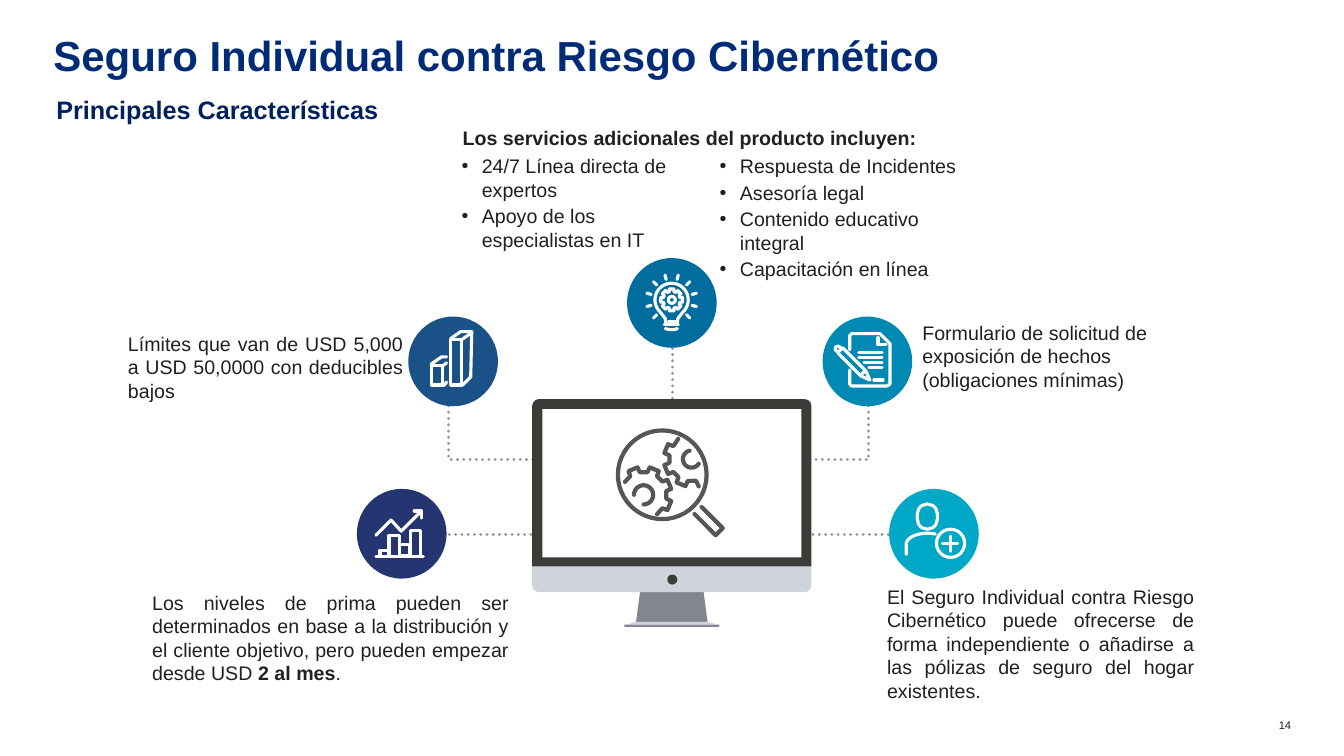
import math

import pptx
import pptx.dml.color
import pptx.enum.dml
import pptx.enum.shapes
import pptx.enum.text
import pptx.oxml.ns
import pptx.util
from lxml import etree

COLUMNS, ROWS = 133.33, 75
CELL = pptx.util.Inches(0.1)
SHAPE = pptx.enum.shapes.MSO_SHAPE
ALIGN = pptx.enum.text.PP_ALIGN
ANCHOR = pptx.enum.text.MSO_ANCHOR
DOTTED = pptx.enum.dml.MSO_LINE.ROUND_DOT
INK, WHITE, GREY = "202020", "FFFFFF", "565656"
BEZEL, SILVER, STEEL = "3B3C38", "CFD4DB", "838690"


def cells(*counts):
    return [round(count * CELL) for count in counts]


def color(hex_value):
    return pptx.dml.color.RGBColor.from_string(hex_value)


def assign(target, values):
    for key, value in values.items():
        setattr(target, key, value)


def polar(cx, cy, radius, degrees, ry=None):
    angle = math.radians(degrees)
    return cx + radius * math.cos(angle), cy + (ry or radius) * math.sin(angle)


def arc(cx, cy, radius, start, end, ry=None, steps=32):
    return [polar(cx, cy, radius, start + (end - start) * i / steps, ry) for i in range(steps + 1)]


def gear(cx, cy, outer, root, teeth, half):
    corners = ((root, -half - 3), (outer, -half), (outer, half), (root, half + 3))
    return [polar(cx, cy, radius, tooth + turn) for tooth in teeth for radius, turn in corners]


class Board:
    def __init__(self, slide, font="Arial"):
        self.slide, self.font = slide, font
        self.pen = {}

    def outline(self, line, ink, weight, dash=None):
        line.color.rgb = color(ink)
        assign(line, {"width": pptx.util.Pt(weight), "dash_style": dash})
        stroke_format = line._get_or_add_ln()
        stroke_format.set("cap", "rnd")
        etree.SubElement(stroke_format, pptx.oxml.ns.qn("a:round"))

    def finish(self, item, fill=None):
        item.shadow.inherit = False
        if fill:
            item.fill.solid()
            item.fill.fore_color.rgb = color(fill)
            item.line.fill.background()
        else:
            item.fill.background()
            self.outline(item.line, **self.pen)
        return item

    def shape(self, kind, box, fill=None, adjust=()):
        item = self.slide.shapes.add_shape(kind, *cells(*box))
        for index, value in enumerate(adjust):
            item.adjustments[index] = value
        return self.finish(item, fill)

    def stroke(self, points, closed=False, fill=None):
        start, *rest = [cells(*point) for point in points]
        builder = self.slide.shapes.build_freeform(*start, scale=1.0)
        builder.add_line_segments(rest, close=closed)
        return self.finish(builder.convert_to_shape(), fill)

    def line(self, *ends):
        straight = pptx.enum.shapes.MSO_CONNECTOR.STRAIGHT
        item = self.slide.shapes.add_connector(straight, *cells(*ends))
        self.outline(item.line, **self.pen)
        etree.SubElement(item._element.spPr, pptx.oxml.ns.qn("a:effectLst"))
        return item

    def group(self, parts):
        self.slide.shapes.add_group_shape(shapes=parts)

    def text(self, box, paragraphs, size=14, ink=INK, bold=False, align=ALIGN.LEFT,
             inset=(0, 0), anchor=ANCHOR.TOP, spacing=None, gap=0, holder=None):
        item = holder or self.slide.shapes.add_textbox(*cells(*box))
        assign(item, dict(zip(("left", "top", "width", "height"), cells(*box))))
        side, edge = cells(*inset)
        frame = item.text_frame
        assign(frame, {"word_wrap": True, "auto_size": pptx.enum.text.MSO_AUTO_SIZE.NONE,
                       "vertical_anchor": anchor, "margin_left": side, "margin_right": side,
                       "margin_top": edge, "margin_bottom": edge})
        for index, runs in enumerate(paragraphs):
            paragraph = frame.add_paragraph() if index else frame.paragraphs[0]
            assign(paragraph, {"alignment": align, "line_spacing": spacing,
                               "space_before": pptx.util.Pt(gap if index else 0)})
            for position, words in enumerate(runs):
                run = paragraph.add_run()
                run.text = words
                assign(run.font, {"name": self.font, "size": pptx.util.Pt(size),
                                  "bold": bold or position == 1})
                run.font.color.rgb = color(ink)
        return frame

    def bullets(self, box, items, holder, indent=2):
        frame = self.text(box, [[item] for item in items], gap=2, holder=holder)
        step, = cells(indent)
        for paragraph in frame.paragraphs:
            properties = paragraph._p.get_or_add_pPr()
            properties.set("marL", str(step))
            properties.set("indent", str(-step))
            etree.SubElement(properties, pptx.oxml.ns.qn("a:buChar")).set("char", "•")


def draw_monitor(board):
    rounded = SHAPE.ROUND_2_SAME_RECTANGLE
    board.group([
        board.stroke([(70.2, 61.7), (63.1, 61.7), (63.5, 58.7), (69.8, 58.7)], True, STEEL),
        board.shape(rounded, (52.8, 56.2, 27.7, 2.55), SILVER, (0, 0.27)),
        board.shape(rounded, (52.8, 39.6, 27.7, 16.6), BEZEL, (0.04, 0)),
        board.shape(SHAPE.RECTANGLE, (53.8, 40.6, 25.7, 14.7), WHITE),
        board.stroke([(63.1, 61.7), (70.2, 61.7), (71.4, 62), (61.9, 62)], True, SILVER),
        board.stroke([(71.4, 62), (71.3, 62.2), (62, 62.2), (61.9, 62)], True, STEEL),
        board.shape(SHAPE.OVAL, (66.2, 57, 1, 1), BEZEL)])


def draw_growth(board):
    bars = ((37.7, 54.6, 0.9, 0.6), (38.6, 53.1, 1, 2.1), (39.6, 54, 1, 1.1), (40.7, 52.6, 1, 2.6))
    board.group([board.shape(SHAPE.RECTANGLE, bar) for bar in bars] + [
        board.stroke([(41.1, 50.7), (41.8, 50.7), (41.8, 51.4)]),
        board.line(42, 55.2, 37.3, 55.2),
        board.stroke([(41.8, 50.7), (39.8, 52.7), (38.8, 51.6), (37.3, 53.1)])])


def draw_towers(board):
    board.group([
        board.shape(SHAPE.RECTANGLE, (44.7, 33.7, 1.1, 4.5)),
        board.line(45.8, 33.7, 46.8, 33),
        board.stroke([(45.8, 38.2), (45.9, 38.2), (46.7, 37.4), (46.8, 32.9),
                      (45.7, 32.9), (44.7, 33.6)]),
        board.shape(SHAPE.RECTANGLE, (42.8, 36.3, 1.1, 1.9)),
        board.line(43.9, 36.3, 44.3, 36),
        board.stroke([(43.9, 38.2), (44.1, 38.2), (44.3, 37.9)]),
        board.stroke([(44.3, 35.4), (43.8, 35.4), (42.8, 36.1), (42.8, 36.3)])])


def draw_bulb(board):
    cx, cy = 66.63, 29.75
    rays = [(polar(cx, cy, 2.1, turn - 90), polar(cx, cy, 2.55, turn - 90))
            for turn in range(-135, 136, 30)]
    board.group([
        board.stroke(gear(cx, cy, 1.1, 0.85, range(0, 360, 45), 12), True),
        board.shape(SHAPE.OVAL, (66.3, 29.4, 0.7, 0.7)),
        board.stroke([(67.2, 32), (67.25, 31.6), *arc(cx, cy, 1.65, 47, -227),
                      (66, 31.6), (66.05, 32)]),
        board.line(65.9, 32.2, 67.3, 32.2),
        board.stroke([(67.2, 32.6), (66.9, 32.7), (66.4, 32.7), (66, 32.6)]),
        board.line(66.3, 31.9, 67, 31.9)] + [board.line(*near, *far) for near, far in rays])


def draw_form(board):
    rules = ((86.7, 37.7, 87.6), (85.2, 35, 87.5), (85.2, 35.5, 87.5),
             (85.7, 36, 87.5), (86.2, 36.5, 87.5))
    board.group([
        board.stroke([(83.6, 34.5), (85.9, 36.8), (86.3, 37.7), (85.4, 37.3), (83.1, 35)], True),
        board.stroke([(83.4, 34.5), (83.2, 34.35), (82.9, 34.4), (82.85, 34.7), (83.1, 34.9)]),
        board.line(85.8, 36.8, 85.4, 37.2),
        board.stroke([(84.3, 34.7), (84.3, 33.3), (84.5, 33.1), (87.3, 33.1), (88.3, 34.1),
                      (88.3, 38.1), (88, 38.3), (84.5, 38.3), (84.3, 38.1), (84.3, 36.7)]),
        board.stroke([(87.9, 34.2), (87.1, 34.2), (87.1, 33.5)])]
        + [board.line(start, row, end, row) for start, row, end in rules])


def draw_person(board):
    board.group([
        board.shape(SHAPE.ROUNDED_RECTANGLE, (91, 50, 2, 2.5), adjust=(0.5,)),
        board.stroke([(89.9, 55), *arc(92, 54, 2.1, 180, 292, ry=1.1)]),
        board.shape(SHAPE.OVAL, (92.9, 52.5, 2.8, 2.8)),
        board.line(94.3, 53.2, 94.3, 54.7),
        board.line(95, 53.9, 93.5, 53.9)])


def draw_magnifier(board):
    upper, lower = (68.6, 45.55), (63.85, 49.1)
    board.group([
        board.stroke([polar(*upper, 2.8, 75), polar(*upper, 2.2, 78),
                      *gear(*upper, 2.75, 2.2, (112.5, 157.5, 202.5), 10),
                      polar(*upper, 2.4, 237)]),
        board.stroke(arc(*upper, 0.85, 33, 257)),
        board.stroke([polar(*lower, 2.26, -145),
                      *gear(*lower, 2.8, 2.28, (-112.5, -67.5, -22.5, 22.5), 10),
                      polar(*lower, 2.33, 55)]),
        board.stroke(arc(*lower, 0.95, 180, 450)),
        board.shape(SHAPE.OVAL, (61.3, 42.7, 8.8, 8.8)),
        board.stroke([(69.6, 50.3), (71.7, 52.4), (71, 53.1), (68.9, 51)])])


def main():
    deck = pptx.Presentation()
    deck.slide_width, deck.slide_height = cells(COLUMNS, ROWS)
    slide = deck.slides.add_slide(deck.slide_layouts[3])
    board = Board(slide)
    title, support, guidance = slide.placeholders

    board.pen = {"ink": "949494", "weight": 2.25, "dash": DOTTED}
    board.line(66.7, 44.5, 66.7, 32.4)
    for outer, inner in ((86.2, 74.3), (44.5, 56.4)):
        board.stroke([(outer, 38.4), (outer, 45.6), (inner, 45.6)])
    board.line(93.1, 53, 38.7, 53)
    draw_monitor(board)

    board.text((5.3, 3.9, 122.7, 4), [["Seguro Individual contra Riesgo Cibernético"]], 30, "002C77",
               True, anchor=ANCHOR.BOTTOM, spacing=0.8, holder=title)
    board.text((4.6, 8.9, 122.8, 3.5), [["Principales Características"]], 18, "002060", True,
               inset=(1, 0.5))
    board.text((125, 71.3, 3.1, 1.3), [["14"]], 8, align=ALIGN.RIGHT)
    board.text((45.9, 12.5, 46.3, 2.9), [["Los servicios adicionales del producto incluyen:"]], bold=True)
    for column, (holder, services) in enumerate((
            (support, ["24/7 Línea directa de expertos", "Apoyo de los especialistas en IT"]),
            (guidance, ["Respuesta de Incidentes", "Asesoría legal",
                        "Contenido educativo integral", "Capacitación en línea"]))):
        board.bullets((45.8 + 25.6 * column, 15.3, 23.6, 12), services, holder)
    for box, align, runs in (
            ((15.1, 58.6, 35.4, 12.3), ALIGN.JUSTIFY, [
                "Los niveles de prima pueden ser determinados en base a la distribución y el "
                "cliente objetivo, pero pueden empezar desde USD", " 2 al mes", "."]),
            ((12.7, 32.9, 27.3, 7.7), ALIGN.JUSTIFY, [
                "Límites que van de USD 5,000 a USD 50,0000 con deducibles bajos"]),
            ((91.5, 31.8, 27, 6.6), ALIGN.LEFT, [
                "Formulario de solicitud de exposición de hechos (obligaciones mínimas)"]),
            ((88, 58, 30.5, 14.1), ALIGN.JUSTIFY, [
                "El Seguro Individual contra Riesgo Cibernético puede ofrecerse de forma "
                "independiente o añadirse a las pólizas de seguro del hogar existentes."])):
        board.text(box, [runs], align=align)

    board.pen = {"ink": WHITE, "weight": 2.25}
    for left, top, fill, draw_icon in (
            (35.4, 48.5, "253572", draw_growth), (40.5, 31.4, "1A5287", draw_towers),
            (62.2, 25.6, "016D9E", draw_bulb), (81.6, 31.4, "0089B2", draw_form),
            (88.2, 48.5, "00A8C8", draw_person)):
        board.shape(SHAPE.OVAL, (left, top, 8.9, 8.9), fill)
        draw_icon(board)
    board.pen = {"ink": GREY, "weight": 3}
    draw_magnifier(board)
    deck.save("out.pptx")


if __name__ == "__main__":
    main()
